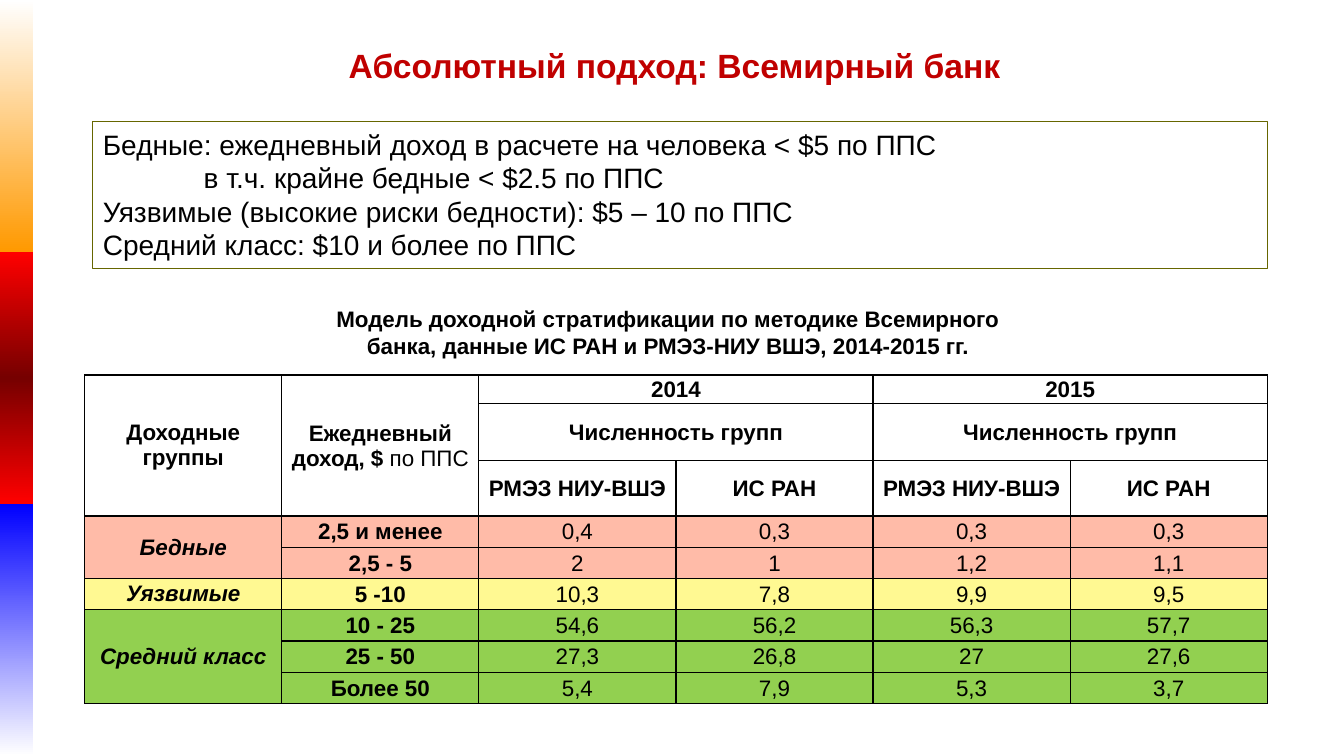
from dataclasses import dataclass

from lxml.etree import SubElement
from pptx import Presentation
from pptx.dml.color import RGBColor
from pptx.enum.shapes import MSO_SHAPE
from pptx.enum.text import MSO_ANCHOR, PP_ALIGN
from pptx.oxml.ns import qn
from pptx.util import Inches, Pt


@dataclass(frozen=True)
class Theme:
    font: str = "Arial"
    title: str = "C00000"
    text: str = "000000"
    frame: str = "666600"
    poor: str = "FFBBA8"
    vulnerable: str = "FFF992"
    middle: str = "92D050"
    title_size: int = 24
    body_size: int = 20
    table_size: int = 16


theme = Theme()


def format_run(r, size, color=theme.text, bold=False, italic=False):
    r.font.name = theme.font
    r.font.size = Pt(size)
    r.font.color.rgb = RGBColor.from_string(color)
    r.font.bold = bold
    r.font.italic = italic


def add_borders(cell):
    """Draw a thin black line on all four sides; call before setting the fill."""
    tcPr = cell._tc.get_or_add_tcPr()
    for side in ("a:lnL", "a:lnR", "a:lnT", "a:lnB"):
        ln = SubElement(tcPr, qn(side), w=str(Pt(1)))
        SubElement(SubElement(ln, qn("a:solidFill")), qn("a:srgbClr"), val=theme.text)


prs = Presentation()
prs.slide_width, prs.slide_height = Inches(13.33), Inches(7.5)
s = prs.slides.add_slide(prs.slide_layouts[1])

# Side bands, each a third of the slide's height
bands = [
    [(0, "FFFFFF"), (100, "FF9900")],
    [(0, "FF0000"), (50, "760000"), (100, "FF0000")],
    [(0, "0000FF"), (100, "FFFFFF")],
]
band_height = prs.slide_height // len(bands)
for i, stops in enumerate(bands):
    sp = s.shapes.add_shape(MSO_SHAPE.RECTANGLE, 0, i * band_height, Inches(0.33), band_height)
    sp.shadow.inherit = False
    sp.line.fill.background()
    sp.fill.gradient()
    sp.fill.gradient_angle = 270
    gs_list = sp._element.spPr.find(".//" + qn("a:gsLst"))
    for gs in list(gs_list):
        gs_list.remove(gs)
    for share, color in stops:
        gs = SubElement(gs_list, qn("a:gs"), pos=str(share * 1000))
        SubElement(gs, qn("a:srgbClr"), val=color)

# Title
title = s.shapes.title
title.left, title.top, title.width, title.height = map(Inches, (2.78, 0.43, 7.82, 0.47))
tf = title.text_frame
tf.text = "Абсолютный подход: Всемирный банк"
tf.vertical_anchor = MSO_ANCHOR.BOTTOM
tf.paragraphs[0].alignment = PP_ALIGN.CENTER
format_run(tf.paragraphs[0].runs[0], theme.title_size, theme.title, bold=True)

# Definitions of the groups: text and left indent in inches
definitions = [
    ("Бедные: ежедневный доход в расчете на человека < $5 по ППС", 0),
    ("в т.ч. крайне бедные < $2.5 по ППС", 1),
    ("Уязвимые (высокие риски бедности): $5 – 10 по ППС", 0),
    ("Средний класс: $10 и более по ППС", 0),
]
body = s.placeholders[1]
body.left, body.top, body.width, body.height = map(Inches, (0.92, 1.21, 11.65, 1.45))
body.line.color.rgb = RGBColor.from_string(theme.frame)
body.line.width = Pt(0.75)
tf = body.text_frame
tf.vertical_anchor = MSO_ANCHOR.TOP
tf.text = "\n".join(text for text, indent in definitions)
for p, (text, indent) in zip(tf.paragraphs, definitions):
    p.space_before = Pt(0)
    pPr = p._p.get_or_add_pPr()
    pPr.set("marL", str(Inches(indent)))
    pPr.set("indent", "0")
    SubElement(pPr, qn("a:buNone"))
    format_run(p.runs[0], theme.body_size)

# Table caption
caption = s.shapes.add_textbox(*map(Inches, (2.97, 2.98, 7.31, 0.64)))
tf = caption.text_frame
tf.word_wrap = True
tf.text = ("Модель доходной стратификации по методике Всемирного банка, "
           "данные ИС РАН и РМЭЗ-НИУ ВШЭ, 2014-2015 гг.")
p = tf.paragraphs[0]
p.alignment = PP_ALIGN.CENTER
p.space_before = Pt(3)
format_run(p.runs[0], theme.table_size, bold=True)

# Income table
surveys = ["РМЭЗ НИУ-ВШЭ", "ИС РАН"]
rows = [
    ["Доходные группы", "Ежедневный доход, $", "2014", "", "2015", ""],
    ["", "", "Численность групп", "", "Численность групп", ""],
    ["", "", *surveys, *surveys],
    ["Бедные", "2,5 и менее", "0,4", "0,3", "0,3", "0,3"],
    ["", "2,5 - 5", "2", "1", "1,2", "1,1"],
    ["Уязвимые", "5 -10", "10,3", "7,8", "9,9", "9,5"],
    ["Средний класс", "10 - 25", "54,6", "56,2", "56,3", "57,7"],
    ["", "25 - 50", "27,3", "26,8", "27", "27,6"],
    ["", "Более 50", "5,4", "7,9", "5,3", "3,7"],
]
header_rows = 3
row_heights = [0.28, 0.57, 0.55] + [0.31] * 6
row_fills = ([None] * header_rows + [theme.poor] * 2
             + [theme.vulnerable] + [theme.middle] * 3)
merges = [
    (0, 0, 2, 0), (0, 1, 2, 1),
    (0, 2, 0, 3), (0, 4, 0, 5), (1, 2, 1, 3), (1, 4, 1, 5),
    (3, 0, 4, 0), (6, 0, 8, 0),
]
table = s.shapes.add_table(len(rows), len(rows[0]), *map(Inches, (0.84, 3.72, 11.73, 3.26))).table
table.first_row = table.horz_banding = False
for row, height in zip(table.rows, row_heights):
    row.height = Inches(height)

for i, (values, fill) in enumerate(zip(rows, row_fills)):
    for j, value in enumerate(values):
        cell = table.cell(i, j)
        add_borders(cell)
        if fill:
            cell.fill.solid()
            cell.fill.fore_color.rgb = RGBColor.from_string(fill)
        else:
            cell.fill.background()
        wide = j == 0 or i == header_rows - 1
        cell.margin_left = cell.margin_right = Inches(0.07 if wide else 0.01)
        cell.margin_top = Inches(0 if wide else 0.01)
        cell.margin_bottom = 0
        cell.vertical_anchor = MSO_ANCHOR.MIDDLE
        if value:
            p = cell.text_frame.paragraphs[0]
            p.text = value
            p.alignment = PP_ALIGN.CENTER
            is_header = i < header_rows
            format_run(p.runs[0], theme.table_size, bold=is_header or j < 2,
                       italic=j == 0 and not is_header)

r = table.cell(0, 1).text_frame.paragraphs[0].add_run()
r.text = " по ППС"
format_run(r, theme.table_size)

for top, left, bottom, right in merges:
    table.cell(top, left).merge(table.cell(bottom, right))

prs.save("out.pptx")
